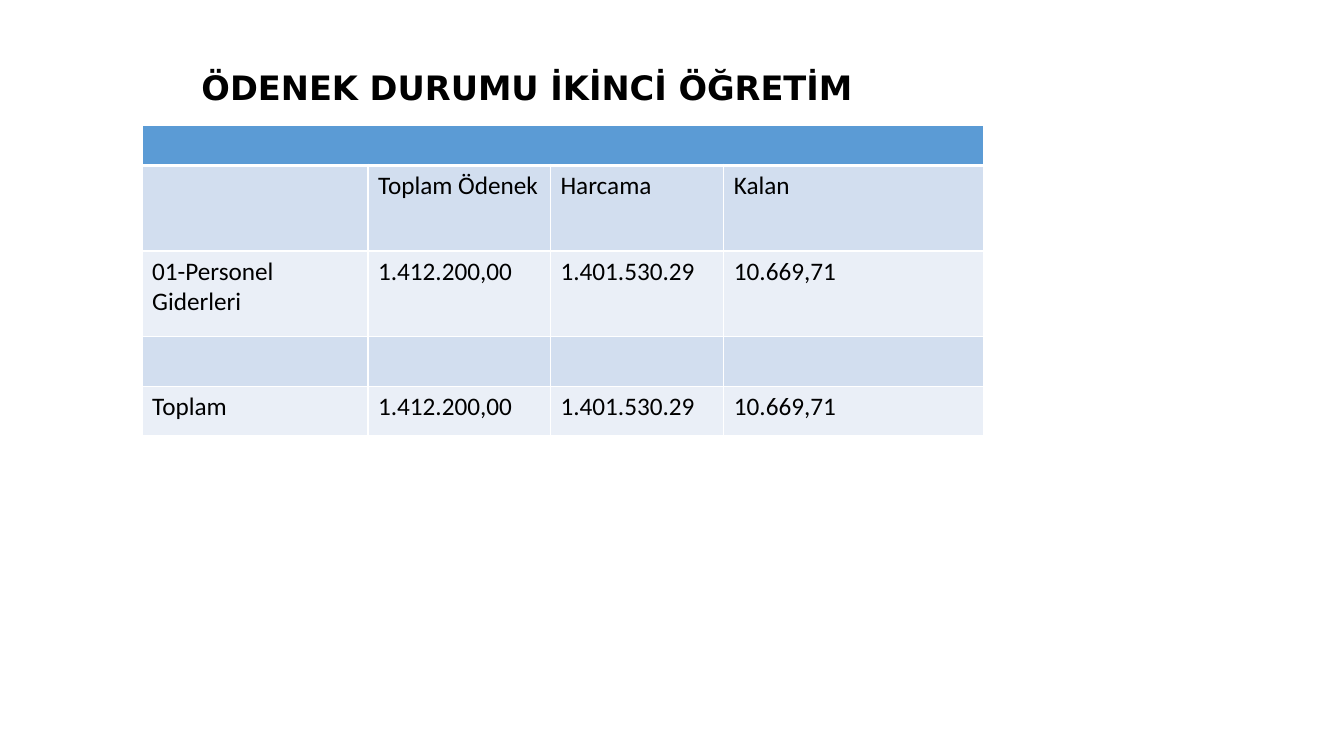
from lxml import etree
from pptx import Presentation
from pptx.dml.color import RGBColor
from pptx.enum import text
from pptx.oxml.ns import qn
from pptx.util import Inches, Pt

COLS = [2.24, 1.81, 1.72, 2.58]
ROW_HEIGHTS = [0.39, 0.85, 0.85, 0.49, 0.49]
AMOUNTS = ["1.412.200,00", "1.401.530.29", "10.669,71"]
ROWS = [
    [""] * 4,
    ["", "Toplam Ödenek", "Harcama", "Kalan"],
    ["01-Personel Giderleri"] + AMOUNTS,
    [""] * 4,
    ["Toplam"] + AMOUNTS,
]
HEADER = "5B9BD5"
BANDS = ["EAEFF7", "D2DEEF"]


def color(value):
    return RGBColor.from_string(value)


def style(p, name, size, bold=False):
    p.font.name = name
    p.font.size = Pt(size)
    p.font.bold = bold
    p.font.color.rgb = color("000000")


def add_title(s, title, left, top, width, height):
    tf = s.shapes.add_textbox(Inches(left), Inches(top), Inches(width), Inches(height)).text_frame
    tf.word_wrap = True
    tf.vertical_anchor = text.MSO_ANCHOR.MIDDLE
    p = tf.paragraphs[0]
    p.text = title
    p.line_spacing = 0.9
    style(p, "DejaVu Sans", 24, True)


def add_borders(cell, bottom):
    tcPr = cell._tc.get_or_add_tcPr()
    for side, width in (("L", 1), ("R", 1), ("T", 1), ("B", bottom)):
        ln = etree.SubElement(tcPr, qn(f"a:ln{side}"), w=str(Pt(width)))
        fill = etree.SubElement(ln, qn("a:solidFill"))
        etree.SubElement(fill, qn("a:srgbClr"), val="FFFFFF")


def add_budget_table(s, left, top):
    frame = s.shapes.add_table(len(ROWS), len(COLS), Inches(left), Inches(top),
                               Inches(sum(COLS)), Inches(sum(ROW_HEIGHTS)))
    table = frame.table
    table.first_row = table.horz_banding = False
    for column, width in zip(table.columns, COLS):
        column.width = Inches(width)
    for i, (row, height, values) in enumerate(zip(table.rows, ROW_HEIGHTS, ROWS)):
        row.height = Inches(height)
        for cell, value in zip(row.cells, values):
            add_borders(cell, 1 if i else 3)
            cell.fill.solid()
            cell.fill.fore_color.rgb = color(BANDS[i % 2] if i else HEADER)
            p = cell.text_frame.paragraphs[0]
            if value:
                p.text = value
            style(p, "Calibri", 18)
    table.cell(0, 0).merge(table.cell(0, len(COLS) - 1))


def main():
    prs = Presentation()
    prs.slide_width = Inches(13.33)
    prs.slide_height = Inches(7.5)
    s = prs.slides.add_slide(prs.slide_layouts[6])
    add_title(s, "ÖDENEK DURUMU İKİNCİ ÖĞRETİM", 1.9, 0.4, 10.52, 0.98)
    add_budget_table(s, 1.41, 1.24)
    prs.save("out.pptx")


if __name__ == "__main__":
    main()
